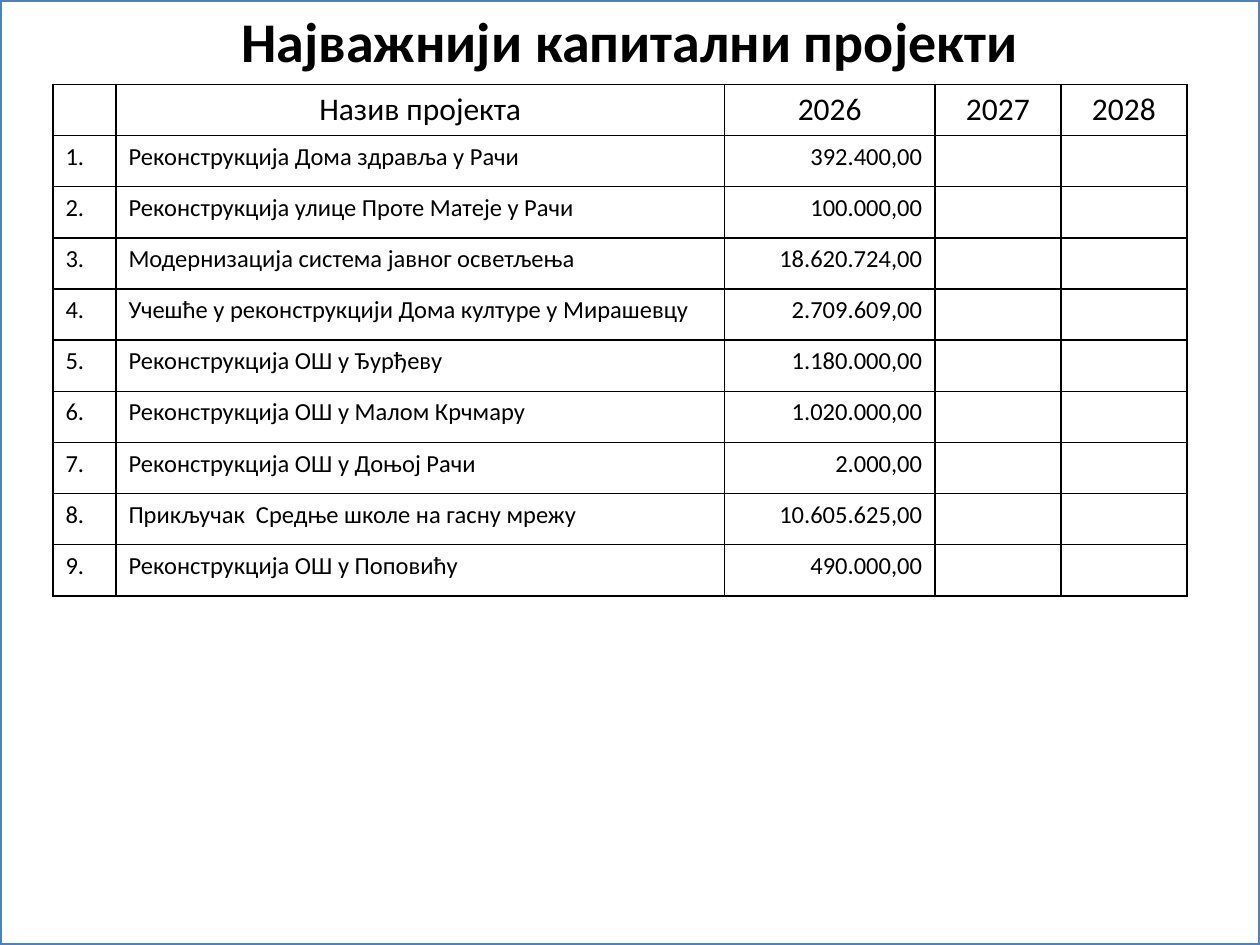
from typing import NamedTuple

import pptx
import pptx.dml.color
import pptx.enum.text
import pptx.oxml
import pptx.oxml.ns
import pptx.util

ALIGN = pptx.enum.text.PP_ALIGN
ANCHOR = pptx.enum.text.MSO_ANCHOR
WIDTH, HEIGHT = 10, 7.5
BLACK, WHITE, BLUE = "000000", "FFFFFF", "4F81BD"
TABLE_LEFT, TABLE_TOP, ROW_HEIGHT = 0.42, 0.67, 0.406
COLUMN_WIDTHS = (0.5, 4.83, 1.67, 1, 1)
HEADERS = ("", "Назив пројекта", "2026", "2027", "2028")
HEADER_ALIGNS = (ALIGN.CENTER,) * len(HEADERS)
BODY_ALIGNS = (ALIGN.LEFT, ALIGN.LEFT, ALIGN.RIGHT, ALIGN.RIGHT, ALIGN.RIGHT)


class Project(NamedTuple):
    """A capital project and its planned amount for 2026."""

    name: str
    amount: str


PROJECTS = (
    Project("Реконструкција Дома здравља у Рачи", "392.400,00"),
    Project("Реконструкција улице Проте Матеје у Рачи", "100.000,00"),
    Project("Модернизација система јавног осветљења", "18.620.724,00"),
    Project("Учешће у реконструкцији Дома културе у Мирашевцу", "2.709.609,00"),
    Project("Реконструкција ОШ у Ђурђеву", "1.180.000,00"),
    Project("Реконструкција ОШ у Малом Крчмару", "1.020.000,00"),
    Project("Реконструкција ОШ у Доњој Рачи", "2.000,00"),
    Project("Прикључак  Средње школе на гасну мрежу", "10.605.625,00"),
    Project("Реконструкција ОШ у Поповићу", "490.000,00"),
)


def rgb(value: str) -> pptx.dml.color.RGBColor:
    """Return the colour for a hex string."""
    return pptx.dml.color.RGBColor.from_string(value)


def apply(target, values: dict) -> None:
    """Set every attribute named in values on target."""
    for name, value in values.items():
        setattr(target, name, value)


def write(tf, text: str, size: float, align, bold: bool = False) -> None:
    """Write one formatted paragraph into a text frame."""
    p = tf.paragraphs[0]
    apply(p, {"alignment": align, "space_before": pptx.util.Pt(0)})
    r = p.add_run()
    r.text = text
    apply(r.font, {"name": "Calibri", "size": pptx.util.Pt(size), "bold": bold})
    r.font.color.rgb = rgb(BLACK)


def add_borders(cell, color: str, width: float) -> None:
    """Give a cell the same line on all four sides."""
    tc_pr = cell._tc.get_or_add_tcPr()
    for side in "LRTB":
        tc_pr.append(pptx.oxml.parse_xml(
            f'<a:ln{side} {pptx.oxml.ns.nsdecls("a")} w="{pptx.util.Pt(width)}">'
            f'<a:solidFill><a:srgbClr val="{color}"/></a:solidFill></a:ln{side}>'
        ))


def add_title(slide, text: str) -> None:
    """Stretch the title placeholder into the slide's framed background."""
    sp = slide.shapes.title
    apply(sp, {
        "left": 0,
        "top": 0,
        "width": pptx.util.Inches(WIDTH),
        "height": pptx.util.Inches(HEIGHT),
    })
    sp.fill.solid()
    sp.fill.fore_color.rgb = rgb(WHITE)
    sp.line.color.rgb = rgb(BLUE)
    sp.line.width = pptx.util.Pt(2)
    tf = sp.text_frame
    apply(tf, {
        "vertical_anchor": ANCHOR.TOP,
        "word_wrap": True,
        "auto_size": pptx.enum.text.MSO_AUTO_SIZE.NONE,
    })
    write(tf, text, 32, ALIGN.CENTER, bold=True)


def fill_row(table, index: int, texts: tuple, size: float, aligns: tuple) -> None:
    """Format one table row and write its texts."""
    table.rows[index].height = pptx.util.Inches(ROW_HEIGHT)
    for cell, text, align in zip(table.rows[index].cells, texts, aligns):
        add_borders(cell, BLACK, 1)
        cell.fill.solid()
        cell.fill.fore_color.rgb = rgb(WHITE)
        if text:
            write(cell.text_frame, text, size, align)


def add_projects(slide) -> None:
    """Add the table of numbered projects."""
    rows = len(PROJECTS) + 1
    table = slide.shapes.add_table(
        rows, len(HEADERS),
        *map(pptx.util.Inches,
             (TABLE_LEFT, TABLE_TOP, sum(COLUMN_WIDTHS), rows * ROW_HEIGHT)),
    ).table
    apply(table, {"first_row": False, "horz_banding": False})
    for column, width in zip(table.columns, COLUMN_WIDTHS):
        column.width = pptx.util.Inches(width)
    fill_row(table, 0, HEADERS, 18, HEADER_ALIGNS)
    for i, project in enumerate(PROJECTS, 1):
        fill_row(table, i, (f"{i}.", *project, "", ""), 14, BODY_ALIGNS)


def main() -> None:
    """Build and save the slide."""
    prs = pptx.Presentation()
    apply(prs, {
        "slide_width": pptx.util.Inches(WIDTH),
        "slide_height": pptx.util.Inches(HEIGHT),
    })
    s = prs.slides.add_slide(prs.slide_layouts.get_by_name("Title Only"))
    add_title(s, "Најважнији капитални пројекти")
    add_projects(s)
    prs.save("out.pptx")


if __name__ == "__main__":
    main()
